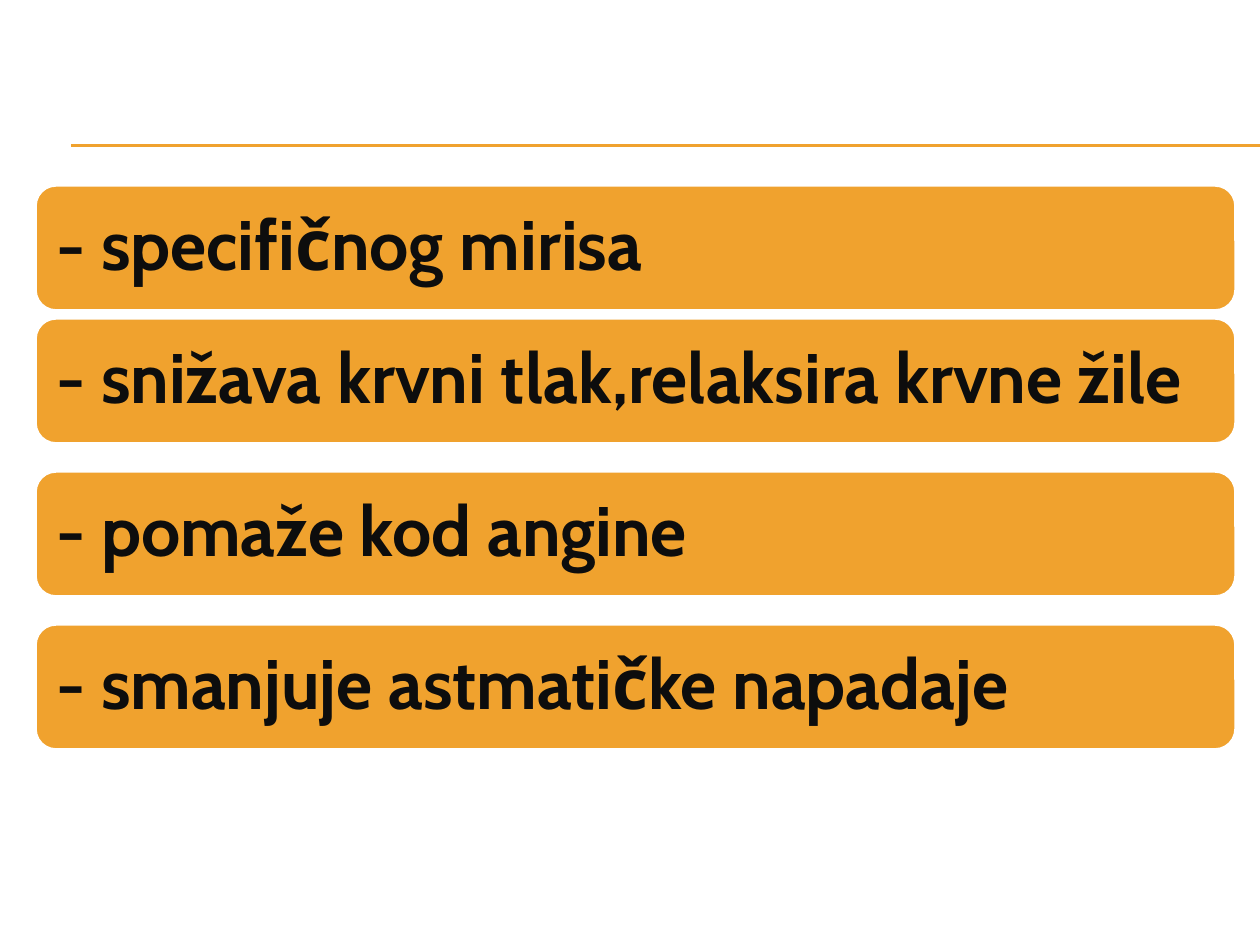
from lxml.etree import SubElement
from pptx import Presentation
from pptx.dml.color import RGBColor
from pptx.enum.shapes import MSO_CONNECTOR, MSO_SHAPE
from pptx.enum.text import MSO_ANCHOR, PP_ALIGN
from pptx.oxml.ns import qn
from pptx.util import Emu, Pt

COLOURS = {"amber": "F0A22E", "white": "FFFFFF", "ink": "0D0D0D"}
FONT = "Cabin"
BENEFITS = [
    (0, "- specifičnog mirisa"),
    (133, "- snižava krvni tlak,relaksira krvne žile"),
    (286, "- pomaže kod angine"),
    (439, "- smanjuje astmatičke napadaje"),
]


def px(length):
    """Turn a length in px into EMU."""
    return Emu(round(length * 914400 / 126))


def colour(name):
    """Return the named colour of the palette."""
    return RGBColor.from_string(COLOURS[name])


def add_rule(page, left, top, width):
    """Draw a thin horizontal rule."""
    rule = page.shapes.add_connector(
        MSO_CONNECTOR.STRAIGHT, px(left), px(top), px(left + width), px(top)
    )
    rule.line.color.rgb = colour("amber")
    rule.line.width = Pt(0.75)
    SubElement(rule._element.spPr, qn("a:effectLst"))


def add_bar(page, left, top, width, height, text):
    """Draw one rounded bar with its statement."""
    bar = page.shapes.add_shape(
        MSO_SHAPE.ROUNDED_RECTANGLE, px(left), px(top), px(width), px(height)
    )
    bar.shadow.inherit = False
    bar.fill.solid()
    bar.fill.fore_color.rgb = colour("amber")
    bar.line.color.rgb = colour("white")
    bar.line.width = Pt(2)
    frame = bar.text_frame
    frame.word_wrap = True
    frame.vertical_anchor = MSO_ANCHOR.MIDDLE
    frame.margin_left = frame.margin_right = px(15)
    frame.margin_top = frame.margin_bottom = px(15)
    frame.text = text
    paragraph = frame.paragraphs[0]
    paragraph.alignment = PP_ALIGN.LEFT
    paragraph.line_spacing = 0.9
    font = paragraph.runs[0].font
    font.name = FONT
    font.size = Pt(40)
    font.bold = True
    font.color.rgb = colour("ink")


def add_benefits(page, left, top, width):
    """Stack the bars of the list below one another."""
    for offset, text in BENEFITS:
        add_bar(page, left, top + offset, width, 126, text)


def main():
    """Build the deck and save it."""
    deck = Presentation()
    deck.slide_width, deck.slide_height = px(1260), px(945)
    page = deck.slides.add_slide(deck.slide_layouts[6])
    for top in (145, 146):
        add_rule(page, 71, top, 1189)
    add_benefits(page, 35, 185, 1201)
    deck.save("out.pptx")


if __name__ == "__main__":
    main()
